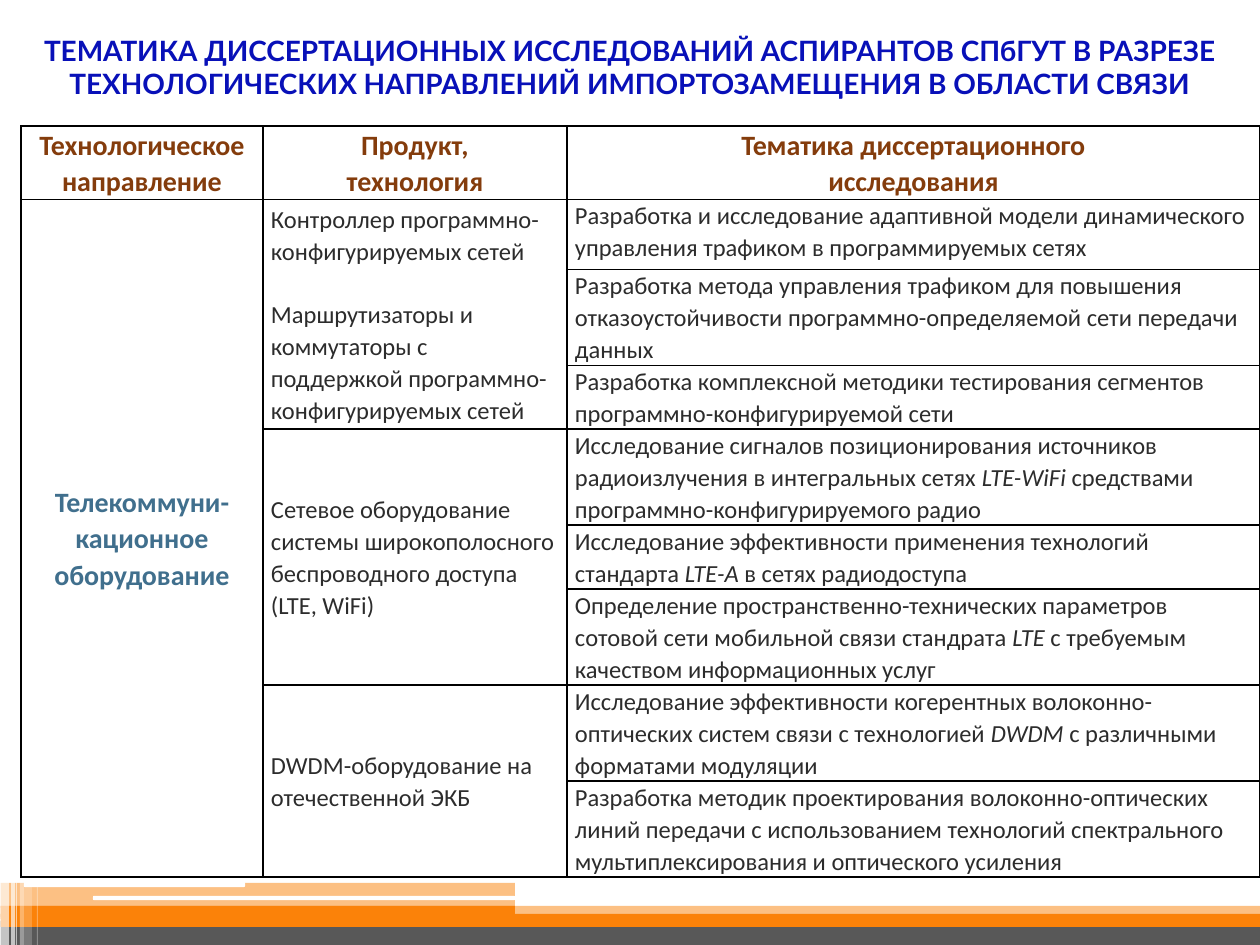
from lxml.etree import SubElement
from pptx import Presentation
from pptx.dml.color import RGBColor
from pptx.enum.shapes import MSO_SHAPE as Preset
from pptx.enum.text import MSO_ANCHOR as Anchor, MSO_AUTO_SIZE as AutoSize, PP_ALIGN as Align
from pptx.oxml.ns import qn
from pptx.util import Pt

PX = 914400 / 126
WIDTH, HEIGHT = 1260, 945

TITLE = ("ТЕМАТИКА ДИССЕРТАЦИОННЫХ ИССЛЕДОВАНИЙ АСПИРАНТОВ СПбГУТ В РАЗРЕЗЕ "
         "ТЕХНОЛОГИЧЕСКИХ НАПРАВЛЕНИЙ ИМПОРТОЗАМЕЩЕНИЯ В ОБЛАСТИ СВЯЗИ")

HEADERS = [
    ["Технологическое направление"],
    ["Продукт,", "технология"],
    ["Тематика диссертационного", "исследования"],
]
DIRECTION = ["Телекоммуни-", "кационное", "оборудование"]

# Each product with its topics; a topic is a list of runs, every second one italic
PRODUCTS = [
    (["Контроллер программно-конфигурируемых сетей",
      "Маршрутизаторы и коммутаторы с поддержкой программно-конфигурируемых сетей"],
     [["Разработка и исследование адаптивной модели динамического управления трафиком "
       "в программируемых сетях"],
      ["Разработка метода управления трафиком для повышения отказоустойчивости "
       "программно-определяемой сети передачи данных"],
      ["Разработка комплексной методики тестирования сегментов "
       "программно-конфигурируемой сети"]]),
    (["Сетевое оборудование системы широкополосного беспроводного доступа (LTE, WiFi)"],
     [["Исследование сигналов позиционирования источников радиоизлучения "
       "в интегральных сетях ", "LTE-WiFi", " средствами программно-конфигурируемого радио"],
      ["Исследование эффективности применения технологий стандарта ", "LTE-A",
       " в сетях радиодоступа"],
      ["Определение пространственно-технических параметров сотовой сети мобильной связи "
       "стандрата ", "LTE", " с требуемым качеством информационных услуг"]]),
    (["DWDM-оборудование на отечественной ЭКБ"],
     [["Исследование эффективности когерентных волоконно-оптических систем связи "
       "с технологией ", "DWDM", " с различными форматами модуляции"],
      ["Разработка методик проектирования волоконно-оптических линий передачи "
       "с использованием технологий спектрального мультиплексирования "
       "и оптического усиления"]]),
]

TABLE_LEFT, TABLE_TOP = 21, 126
COLUMNS = [242, 304, 693]
ROWS = [73, 70, 96, 64, 96, 63, 96, 96, 96]

# Footer parts: left, top, width, height, colour, opacity in percent
ORANGE, GREY, WHITE = "FB8209", "585858", "FFFFFF"
BARS = [
    (1, 906, 1259, 11, ORANGE, 50),
    (1, 921, 1259, 24, GREY, 100),
    (1, 914, 1259, 13, ORANGE, 100),
    (1, 906, 514, 13, ORANGE, 100),
    (1, 883, 514, 25, ORANGE, 50),
]
SLITS = [(93, 896, 422, 4, WHITE, 100), (24, 882, 221, 5, WHITE, 100)]
STRIPES = [
    (1, 859, 8, 86, WHITE, 65),
    (11, 859, 4, 86, WHITE, 65),
    (16, 859, 1, 86, WHITE, 60),
    (20, 859, 4, 86, WHITE, 40),
    (24, 864, 8, 81, WHITE, 20),
    (37, 864, 1, 81, WHITE, 30),
]


def px(value):
    return round(value * PX)


def color(value):
    return RGBColor.from_string(value)


def add_part(slide, preset, left, top, width, height, fill, opacity):
    shape = slide.shapes.add_shape(preset, px(left), px(top), px(width), px(height))
    shape.shadow.inherit = False
    shape.line.fill.background()
    shape.fill.solid()
    shape.fill.fore_color.rgb = color(fill)
    if opacity < 100:
        rgb = shape.fill._xPr.find(".//" + qn("a:srgbClr"))
        SubElement(rgb, qn("a:alpha"), val=str(opacity * 1000))


def add_run(paragraph, text, font, size, ink, bold=False, italic=False):
    run = paragraph.add_run()
    run.text = text
    run.font.name, run.font.size = font, Pt(size)
    run.font.color.rgb = color(ink)
    run.font.bold, run.font.italic = bold, italic


def fill_cell(cell, paragraphs, size=14, ink="2C2C2C", bold=False,
              align=Align.LEFT, anchor=Anchor.MIDDLE, gap=0):
    cell.vertical_anchor = anchor
    for index, runs in enumerate(paragraphs):
        frame = cell.text_frame
        paragraph = frame.add_paragraph() if index else frame.paragraphs[0]
        paragraph.alignment = align
        paragraph.line_spacing = 1.07
        if index:
            paragraph.space_before = Pt(gap)
        for number, text in enumerate(runs):
            add_run(paragraph, text, "Calibri", size, ink, bold, number % 2 == 1)


def frame_cell(cell):
    cell.margin_left = cell.margin_right = px(8)
    cell.margin_top = cell.margin_bottom = 0
    properties = cell._tc.get_or_add_tcPr()
    for side in ("lnL", "lnR", "lnT", "lnB"):
        line = SubElement(properties, qn("a:" + side), w=str(Pt(1)))
        SubElement(SubElement(line, qn("a:solidFill")), qn("a:srgbClr"), val="000000")
    cell.fill.background()


presentation = Presentation()
presentation.slide_width, presentation.slide_height = px(WIDTH), px(HEIGHT)
slide = presentation.slides.add_slide(presentation.slide_layouts[5])

# Footer decoration
for preset, parts in ((Preset.RECTANGLE, BARS), (Preset.ROUNDED_RECTANGLE, SLITS),
                      (Preset.RECTANGLE, STRIPES)):
    for part in parts:
        add_part(slide, preset, *part)

# Title
title = slide.shapes.title
title.left, title.top, title.width, title.height = px(0), px(26), px(WIDTH), px(82)
title.text_frame.auto_size = AutoSize.NONE
title.text_frame.word_wrap = True
title.text_frame.vertical_anchor = Anchor.MIDDLE
heading = title.text_frame.paragraphs[0]
heading.alignment = Align.CENTER
add_run(heading, TITLE, "Lato", 16, "0810B8", bold=True)

# Table grid
table = slide.shapes.add_table(len(ROWS), len(COLUMNS), px(TABLE_LEFT), px(TABLE_TOP),
                               px(sum(COLUMNS)), px(sum(ROWS))).table
table.first_row = table.horz_banding = False
for column, width in zip(table.columns, COLUMNS):
    column.width = px(width)
for row, height in zip(table.rows, ROWS):
    row.height = px(height)
for cell in table.iter_cells():
    frame_cell(cell)

# Header row and the direction
emphasis = dict(size=16, bold=True, align=Align.CENTER)
for column, lines in enumerate(HEADERS):
    fill_cell(table.cell(0, column), [[line] for line in lines], ink="843C0C", **emphasis)
table.cell(1, 0).merge(table.cell(len(ROWS) - 1, 0))
fill_cell(table.cell(1, 0), [[line] for line in DIRECTION], ink="406F8D", **emphasis)

# Products, each spanning its topics
first = 1
for product, topics in PRODUCTS:
    table.cell(first, 1).merge(table.cell(first + len(topics) - 1, 1))
    fill_cell(table.cell(first, 1), [[line] for line in product], gap=18)
    for row, topic in enumerate(topics, first):
        fill_cell(table.cell(row, 2), [topic], anchor=Anchor.TOP)
    first += len(topics)

presentation.save("out.pptx")
